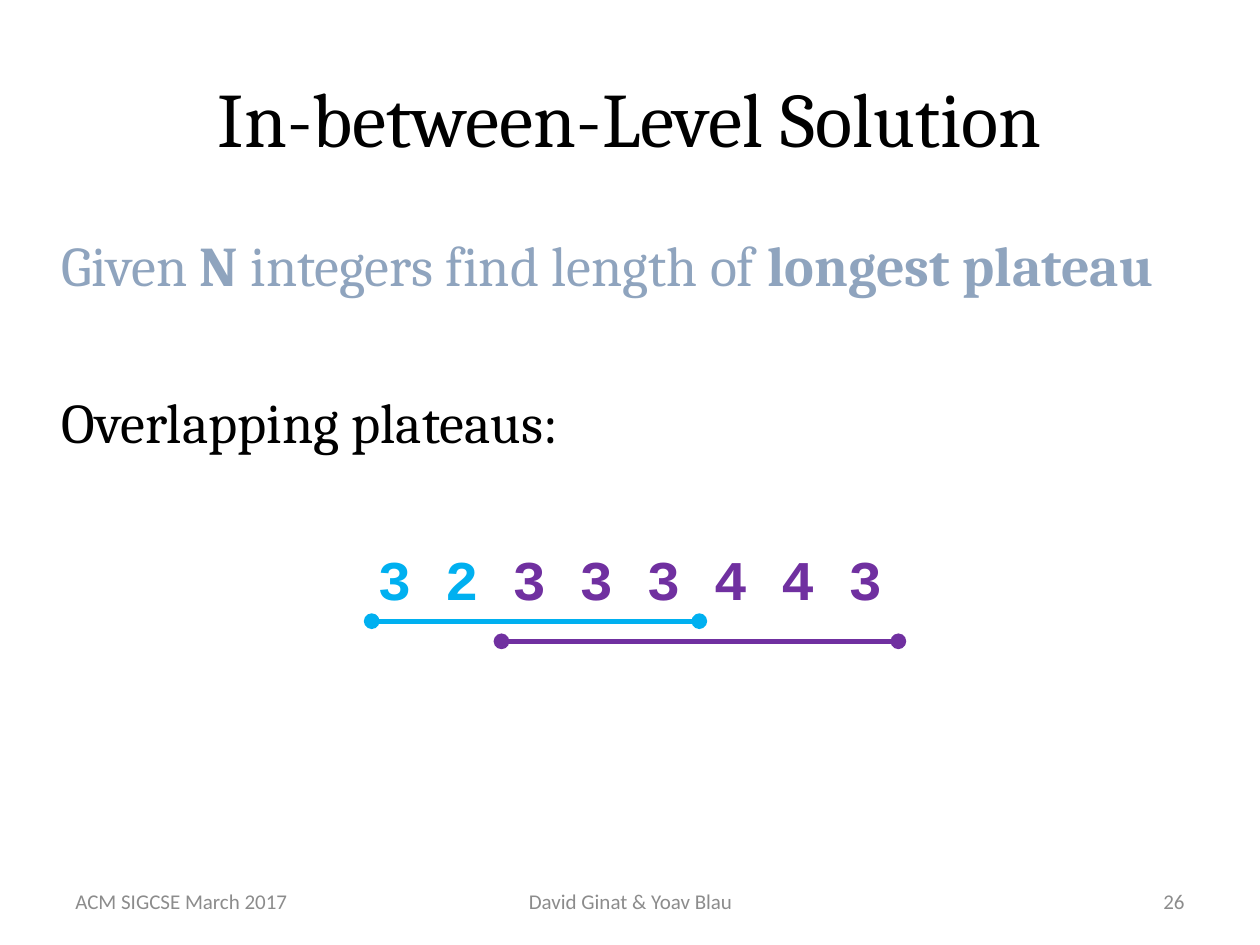
from lxml.etree import SubElement
from pptx import Presentation
from pptx.dml.color import RGBColor
from pptx.enum.shapes import MSO_CONNECTOR, MSO_SHAPE
from pptx.enum.text import MSO_ANCHOR, PP_ALIGN
from pptx.oxml.ns import qn
from pptx.util import Inches, Pt

THEME = {
    "serif": "Cambria", "sans": "Calibri", "mono": "Courier New",
    "title": 44, "body": 32, "footer": 12, "line": 3,
    "black": "000000", "white": "FFFFFF", "navy": "1F497D",
    "cyan": "00B0F0", "purple": "7030A0", "gray": "8C8C8C",
}
LEFT, CENTER, RIGHT = PP_ALIGN.LEFT, PP_ALIGN.CENTER, PP_ALIGN.RIGHT

TITLE = [("In-between-Level Solution", "black", False)]
BODY = [
    ("serif", LEFT, 6.4, [("Given ", "navy", False), ("N", "navy", True),
                          (" integers find length of ", "navy", False),
                          ("longest plateau", "navy", True)]),
    ("serif", LEFT, 51.2, [("Overlapping plateaus:", "black", False)]),
    ("mono", CENTER, 51.2, [("3 2 ", "cyan", True),
                            ("3 3 3 4 4 3", "purple", True)]),
]
PLATEAUS = [(2.95, 5.55, 4.93, "cyan"), (3.98, 7.13, 5.09, "purple")]
FOOTERS = [
    (0.5, 2.33, LEFT, "ACM SIGCSE March 2017"),
    (3.42, 3.17, CENTER, "David Ginat & Yoav Blau"),
    (7.17, 2.33, RIGHT, "26"),
]


def color(name):
    return RGBColor.from_string(THEME[name])


def add_text(s, box, paragraphs, size, anchor=MSO_ANCHOR.MIDDLE):
    tf = s.shapes.add_textbox(*map(Inches, box)).text_frame
    tf.word_wrap = True
    tf.vertical_anchor = anchor
    for i, (font, align, before, runs) in enumerate(paragraphs):
        p = tf.add_paragraph() if i else tf.paragraphs[0]
        p.alignment = align
        p.space_before = Pt(before)
        p.font.name = THEME[font]
        p.font.size = Pt(THEME[size])
        for text, ink, bold in runs:
            r = p.add_run()
            r.text = text
            r.font.color.rgb = color(ink)
            r.font.bold = bold


def add_veil(s, box):
    veil = s.shapes.add_shape(MSO_SHAPE.RECTANGLE, *map(Inches, box))
    veil.shadow.inherit = False
    veil.fill.solid()
    veil.fill.fore_color.rgb = color("white")
    veil.line.fill.background()
    rgb = veil._element.spPr.find(qn("a:solidFill"))[0]
    SubElement(rgb, qn("a:alpha"), val="50000")


def add_plateau(s, x1, x2, y, ink):
    line = s.shapes.add_connector(MSO_CONNECTOR.STRAIGHT, Inches(x1), Inches(y),
                                  Inches(x2), Inches(y))
    line.line.color.rgb = color(ink)
    line.line.width = Pt(THEME["line"])
    for end in ("a:headEnd", "a:tailEnd"):
        SubElement(line.line._get_or_add_ln(), qn(end), type="oval")
    SubElement(line._element.spPr, qn("a:effectLst"))


def main():
    prs = Presentation()
    prs.slide_width, prs.slide_height = Inches(10), Inches(7.5)
    s = prs.slides.add_slide(prs.slide_layouts[6])
    add_text(s, (0.5, 0.3, 9, 1.25), [("serif", CENTER, 0, TITLE)], "title")
    add_text(s, (0.39, 1.78, 9.22, 5.35), BODY, "body", MSO_ANCHOR.TOP)
    add_veil(s, (0.43, 1.78, 9.29, 0.87))
    for plateau in PLATEAUS:
        add_plateau(s, *plateau)
    for x, width, align, text in FOOTERS:
        add_text(s, (x, 6.95, width, 0.4),
                 [("sans", align, 0, [(text, "gray", False)])], "footer")
    prs.save("out.pptx")


if __name__ == "__main__":
    main()
